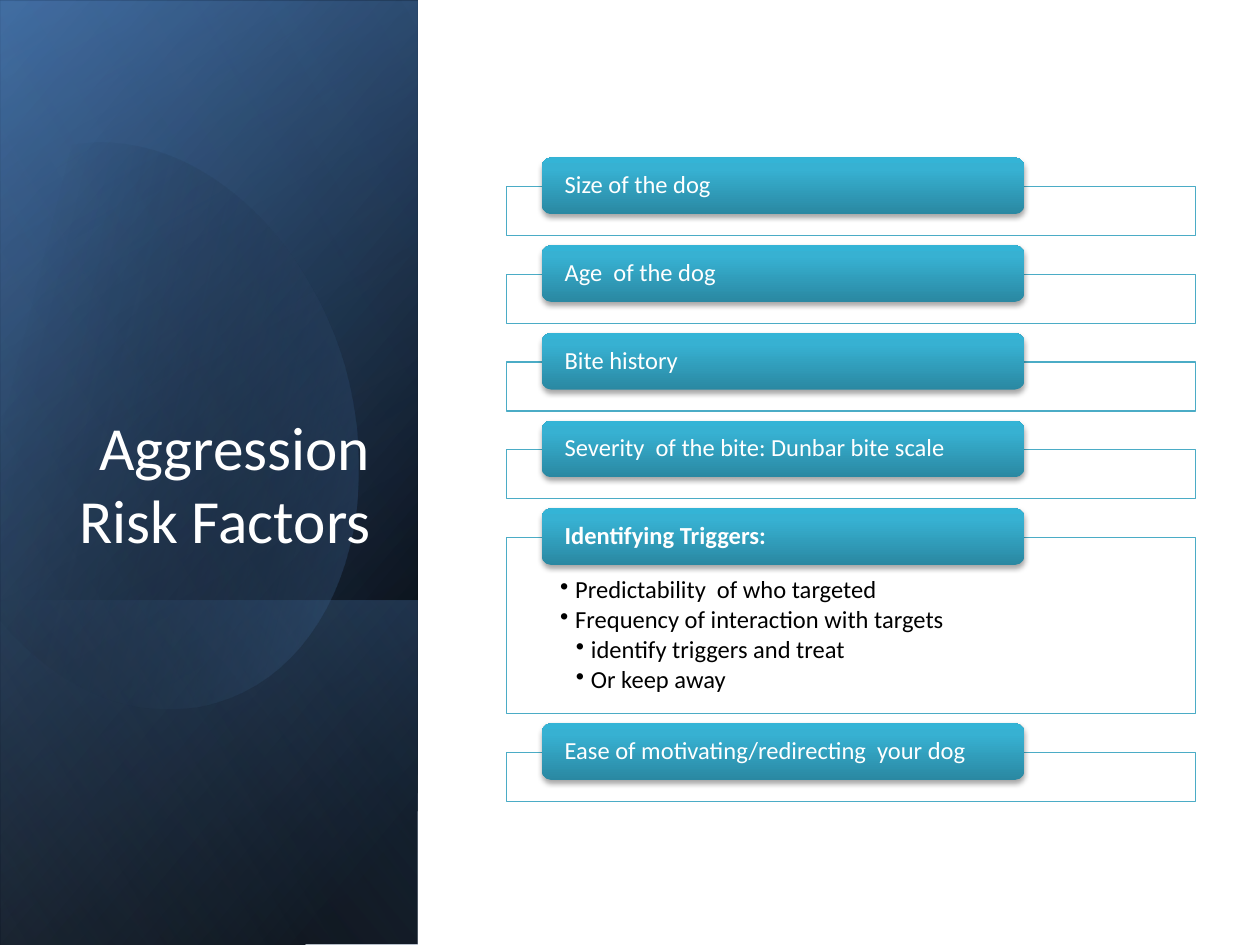
from math import cos, radians, sin

from lxml import etree
from pptx import Presentation
from pptx.dml.color import RGBColor
from pptx.enum.shapes import MSO_SHAPE
from pptx.enum.text import MSO_ANCHOR, PP_ALIGN
from pptx.oxml import parse_xml
from pptx.oxml.ns import nsdecls, qn
from pptx.util import Inches, Pt

FONT = "Calibri"
INK = {"white": "FFFFFF", "black": "000000", "navy": "376092", "blue": "4F81BD",
       "pale": "95B3D7", "aqua": "4BACC6", "deep": "2A88A2", "mid": "37B1D2",
       "top": "34B4D6"}

TITLE = "Aggression Risk Factors"
CARDS = [
    ("Size of the dog", []),
    ("Age  of the dog", []),
    ("Bite history", []),
    ("Severity  of the bite: Dunbar bite scale", []),
    ("Identifying Triggers:", [
        (1, "Predictability  of who targeted"),
        (1, "Frequency of interaction with targets"),
        (2, "identify triggers and treat"),
        (2, "Or keep away")]),
    ("Ease of motivating/redirecting  your dog", []),
]

FULL = (-2.09, 2.09, 7.5, 3.31)
BASE = (FULL, [(8, "black", 100), (100, "navy", 100)], 50)
GLOW = ((-2.09, 2.11, 7.5, 3.31), [(0, "black", 0), (99, "blue", 46)], 30)
FOOT = ((0.29, 4.48, 2.74, 3.31), [(2, "blue", 29), (100, "black", 30)], 130)
VEIL = (FULL, [(0, "black", 0), (99, "pale", 11)], 120)
TAB = [(0, "deep", 100), (80, "mid", 100), (100, "top", 100)]

LEAF = [(29, "black", 0), (100, "blue", 43)]
LEAF_MID, LEAF_TURN = (1.19, 3.35), 343.9
LEAF_START = (0.96, 1.14)
LEAF_PATH = [
    [(1.71, 1.22), (2.44, 1.92), (2.73, 2.9)],
    [(3.07, 4.12), (2.62, 5.31), (1.71, 5.57)],
    [(1.14, 5.74), (0.53, 5.5), (0.07, 5)],
    [(-0.03, 4.88)], [(-0.25, 1.66)], [(-0.15, 1.54)],
    [(0.02, 1.37), (0.22, 1.25), (0.45, 1.18)],
    [(0.62, 1.13), (0.79, 1.12), (0.96, 1.14)],
]

LEFT, WIDE, TOP, END = 4.02, 5.47, 1.48, 6.36
LOW, TALL = 0.39, 1.4
TAB_LEFT, TAB_WIDE, TAB_HIGH, RISE = 4.3, 3.83, 0.45, 0.23


def rgb(name):
    return RGBColor.from_string(INK[name])


def blend(shape, stops, angle):
    shape.fill.background()
    marks = "".join(
        f'<a:gs pos="{pos * 1000}"><a:srgbClr val="{INK[name]}">'
        f'<a:alpha val="{alpha * 1000}"/></a:srgbClr></a:gs>'
        for pos, name, alpha in stops)
    grad = parse_xml(
        f'<a:gradFill {nsdecls("a")} rotWithShape="1"><a:gsLst>{marks}</a:gsLst>'
        f'<a:lin ang="{angle * 60000}" scaled="0"/></a:gradFill>')
    props = shape.element.spPr
    props.replace(props.find(qn("a:noFill")), grad)


def block(kind, box):
    shape = slide.shapes.add_shape(kind, *map(Inches, box))
    shape.shadow.inherit = False
    shape.line.fill.background()
    return shape


def panel(box, stops, angle):
    shape = block(MSO_SHAPE.RECTANGLE, box)
    shape.rotation = 90
    shape.element.spPr.xfrm.set("flipH", "1")
    blend(shape, stops, angle)


def curve(start, ends, steps=24):
    if len(ends) == 1:
        return ends
    pts = [start, *ends]
    out = []
    for i in range(1, steps + 1):
        t = i / steps
        mix = ((1 - t) ** 3, 3 * t * (1 - t) ** 2, 3 * t * t * (1 - t), t ** 3)
        out.append(tuple(sum(m * p[k] for m, p in zip(mix, pts)) for k in (0, 1)))
    return out


def unturn(point):
    turn = radians(-LEAF_TURN)
    x, y = (p - m for p, m in zip(point, LEAF_MID))
    return (Inches(LEAF_MID[0] + x * cos(turn) - y * sin(turn)),
            Inches(LEAF_MID[1] + x * sin(turn) + y * cos(turn)))


def leaf():
    pts = [LEAF_START]
    for ends in LEAF_PATH:
        pts += curve(pts[-1], ends)
    first, *rest = map(unturn, pts)
    pen = slide.shapes.build_freeform(*first)
    pen.add_line_segments(rest, close=True)
    shape = pen.convert_to_shape()
    shape.shadow.inherit = False
    shape.line.fill.background()
    shape.rotation = LEAF_TURN
    blend(shape, LEAF, 30)


def inset(frame, left, top, right, bottom):
    frame.word_wrap = True
    frame.margin_left, frame.margin_top = Inches(left), Inches(top)
    frame.margin_right, frame.margin_bottom = Inches(right), Inches(bottom)


def style(para, size, color, bold=False, align=PP_ALIGN.LEFT):
    para.alignment = align
    for run in para.runs:
        run.font.name, run.font.size, run.font.bold = FONT, Pt(size), bold
        run.font.color.rgb = rgb(color)


def bullets(frame, items):
    inset(frame, 0.42, 0.32, 0.42, 0.11)
    frame.vertical_anchor = MSO_ANCHOR.TOP
    frame.text = "\n".join(text for _, text in items)
    for para, (level, _) in zip(frame.paragraphs, items):
        para.level = level
        props = para._p.get_or_add_pPr()
        props.set("marL", str(Inches(0.125 * level)))
        props.set("indent", str(Inches(-0.12)))
        para.line_spacing, para.space_after = 0.9, Pt(2)
        etree.SubElement(props, qn("a:buChar")).set("char", "•")
        style(para, 14, "black")


def card(top, high, head, items):
    frame = block(MSO_SHAPE.RECTANGLE, (LEFT, top, WIDE, high))
    frame.fill.solid()
    frame.fill.fore_color.rgb = rgb("white")
    frame.line.color.rgb = rgb("aqua")
    frame.line.width = Pt(0.75)
    if items:
        bullets(frame.text_frame, items)
    tab = block(MSO_SHAPE.ROUNDED_RECTANGLE, (TAB_LEFT, top - RISE, TAB_WIDE, TAB_HIGH))
    blend(tab, TAB, 270)
    tab.element.spPr.find(qn("a:effectLst")).append(parse_xml(
        f'<a:outerShdw {nsdecls("a")} blurRad="{Pt(3.1)}" dist="{Pt(1.8)}" '
        f'dir="5400000" rotWithShape="0"><a:srgbClr val="{INK["black"]}">'
        '<a:alpha val="35000"/></a:srgbClr></a:outerShdw>'))
    text = tab.text_frame
    inset(text, 0.16, 0, 0.16, 0)
    text.vertical_anchor = MSO_ANCHOR.MIDDLE
    text.text = head
    text.paragraphs[0].line_spacing = 0.9
    style(text.paragraphs[0], 14, "white", bold=bool(items))


deck = Presentation()
deck.slide_width, deck.slide_height = Inches(10), Inches(7.5)
slide = deck.slides.add_slide(deck.slide_layouts[6])

for part in (BASE, GLOW, FOOT):
    panel(*part)
leaf()
panel(*VEIL)

title = slide.shapes.add_textbox(*map(Inches, (0.48, 1.84, 2.56, 2.62))).text_frame
inset(title, 0.1, 0.05, 0.1, 0.05)
title.vertical_anchor = MSO_ANCHOR.BOTTOM
title.text = TITLE
style(title.paragraphs[0], 35, "white", align=PP_ALIGN.RIGHT)

highs = [TALL if items else LOW for _, items in CARDS]
gap = (END - TOP - sum(highs)) / (len(CARDS) - 1)
top = TOP
for (head, items), high in zip(CARDS, highs):
    card(top, high, head, items)
    top += high + gap

deck.save("out.pptx")
